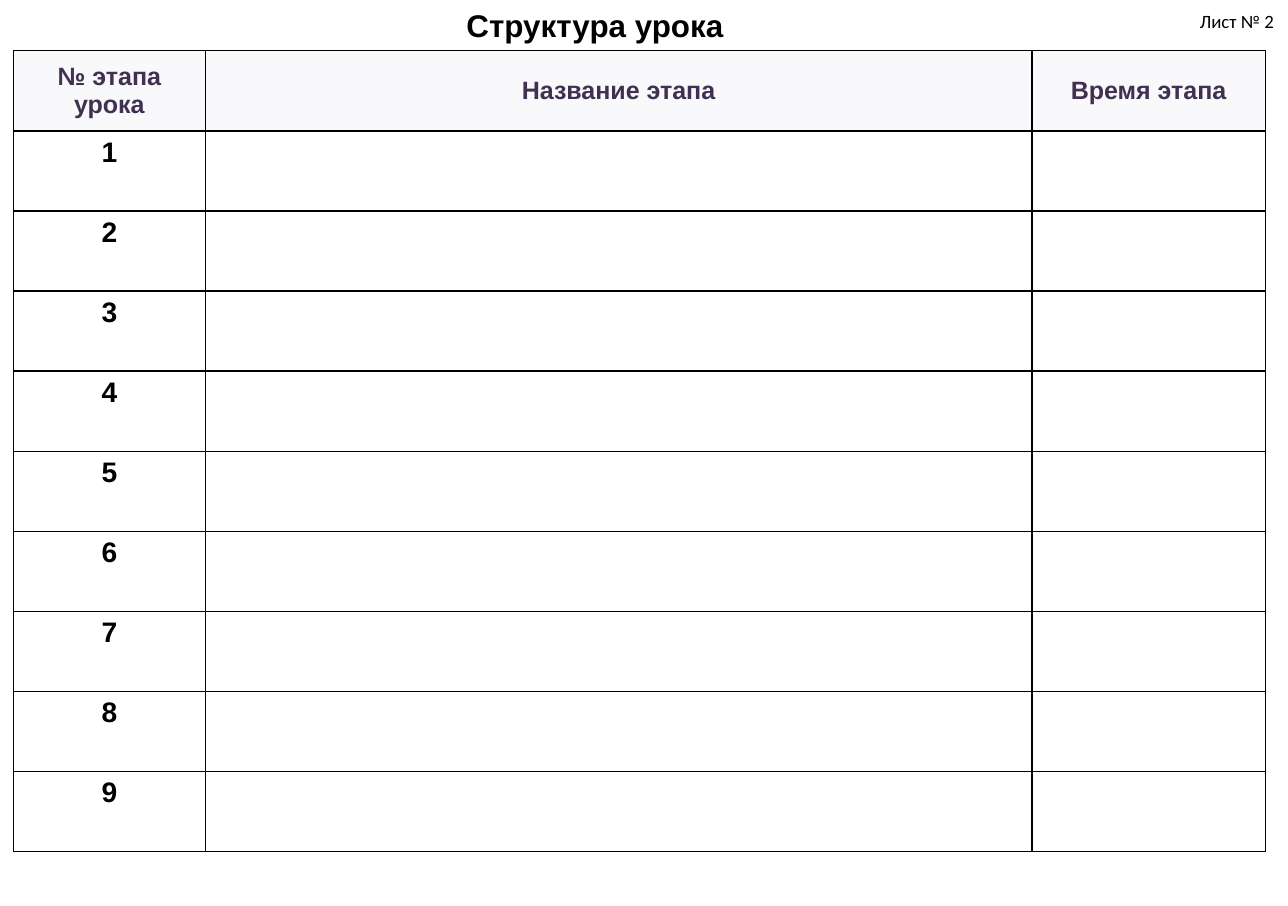
"""Build the lesson structure worksheet slide."""
import lxml.etree
import pptx
import pptx.dml.color
import pptx.enum.text
import pptx.oxml.ns
import pptx.util

Inches = pptx.util.Inches
Align = pptx.enum.text.PP_ALIGN
Anchor = pptx.enum.text.MSO_ANCHOR
AutoSize = pptx.enum.text.MSO_AUTO_SIZE

TITLE_FORMAT = {"name": "Arial", "size": pptx.util.Pt(20), "bold": True}
HEADER_FORMAT = {"name": "Arial", "size": pptx.util.Pt(16), "bold": True}
NUMBER_FORMAT = {"name": "Arial", "size": pptx.util.Pt(18), "bold": True}
SHEET_FORMAT = {"name": "Calibri", "size": pptx.util.Pt(12), "bold": False}

HEADERS = ["№ этапа урока", "Название этапа", "Время этапа"]
COLUMN_WIDTHS = [1.7, 7.33, 2.07]
STAGE_COUNT = 9
ROW_HEIGHT = 0.71


def color(value):
    """Turn a hex string into a colour."""
    return pptx.dml.color.RGBColor.from_string(value)


def write_text(frame, text, formats, align, anchor=Anchor.TOP, ink="000000"):
    """Put one formatted paragraph into a text frame."""
    frame.vertical_anchor = anchor
    para = frame.paragraphs[0]
    para.alignment = align
    span = para.add_run()
    span.text = text
    for name, value in formats.items():
        setattr(span.font, name, value)
    span.font.color.rgb = color(ink)


def add_title(slide, text):
    """Move the title placeholder to the top of the sheet and fill it."""
    title = slide.shapes.title
    title.left, title.top = Inches(2.64), Inches(0)
    title.width, title.height = Inches(5.27), Inches(0.44)
    title.text_frame.auto_size = AutoSize.SHAPE_TO_FIT_TEXT
    write_text(title.text_frame, text, TITLE_FORMAT, Align.CENTER)


def add_sheet_label(slide, text):
    """Add the sheet number in the top right corner."""
    box = slide.shapes.add_textbox(Inches(10.54), Inches(0.04), Inches(0.87), Inches(0.3))
    box.text_frame.word_wrap = False
    box.text_frame.auto_size = AutoSize.SHAPE_TO_FIT_TEXT
    write_text(box.text_frame, text, SHEET_FORMAT, Align.LEFT)


def style_cell(cell, fill):
    """Give a cell thin black borders and a solid fill."""
    qn = pptx.oxml.ns.qn
    properties = cell._tc.get_or_add_tcPr()
    for side in ("lnL", "lnR", "lnT", "lnB"):
        line = lxml.etree.SubElement(properties, qn(f"a:{side}"), w=str(pptx.util.Pt(1)))
        solid = lxml.etree.SubElement(line, qn("a:solidFill"))
        lxml.etree.SubElement(solid, qn("a:srgbClr"), val="000000")
    cell.fill.solid()
    cell.fill.fore_color.rgb = color(fill)


def add_stage_table(slide):
    """Add the table of lesson stages with empty cells to fill in."""
    row_count = STAGE_COUNT + 1
    table = slide.shapes.add_table(
        row_count, len(HEADERS), Inches(0.12), Inches(0.45),
        Inches(sum(COLUMN_WIDTHS)), Inches(ROW_HEIGHT * row_count),
    ).table
    table.horz_banding = False
    for column, width in zip(table.columns, COLUMN_WIDTHS):
        column.width = Inches(width)
    for row in table.rows:
        row.height = Inches(ROW_HEIGHT)
    for cell in table.iter_cells():
        style_cell(cell, "FFFFFF")
    for index, header in enumerate(HEADERS):
        cell = table.cell(0, index)
        cell.fill.fore_color.rgb = color("F9F8FA")
        cell.vertical_anchor = Anchor.MIDDLE
        write_text(cell.text_frame, header, HEADER_FORMAT, Align.CENTER, Anchor.MIDDLE, "403152")
    for stage in range(1, row_count):
        write_text(table.cell(stage, 0).text_frame, str(stage), NUMBER_FORMAT, Align.CENTER)


def main():
    """Build and save the deck."""
    deck = pptx.Presentation()
    deck.slide_width, deck.slide_height = Inches(11.42), Inches(8.03)
    page = deck.slides.add_slide(deck.slide_layouts.get_by_name("Title Only"))
    add_title(page, "Структура урока")
    add_stage_table(page)
    add_sheet_label(page, "Лист № 2")
    deck.save("out.pptx")


if __name__ == "__main__":
    main()
